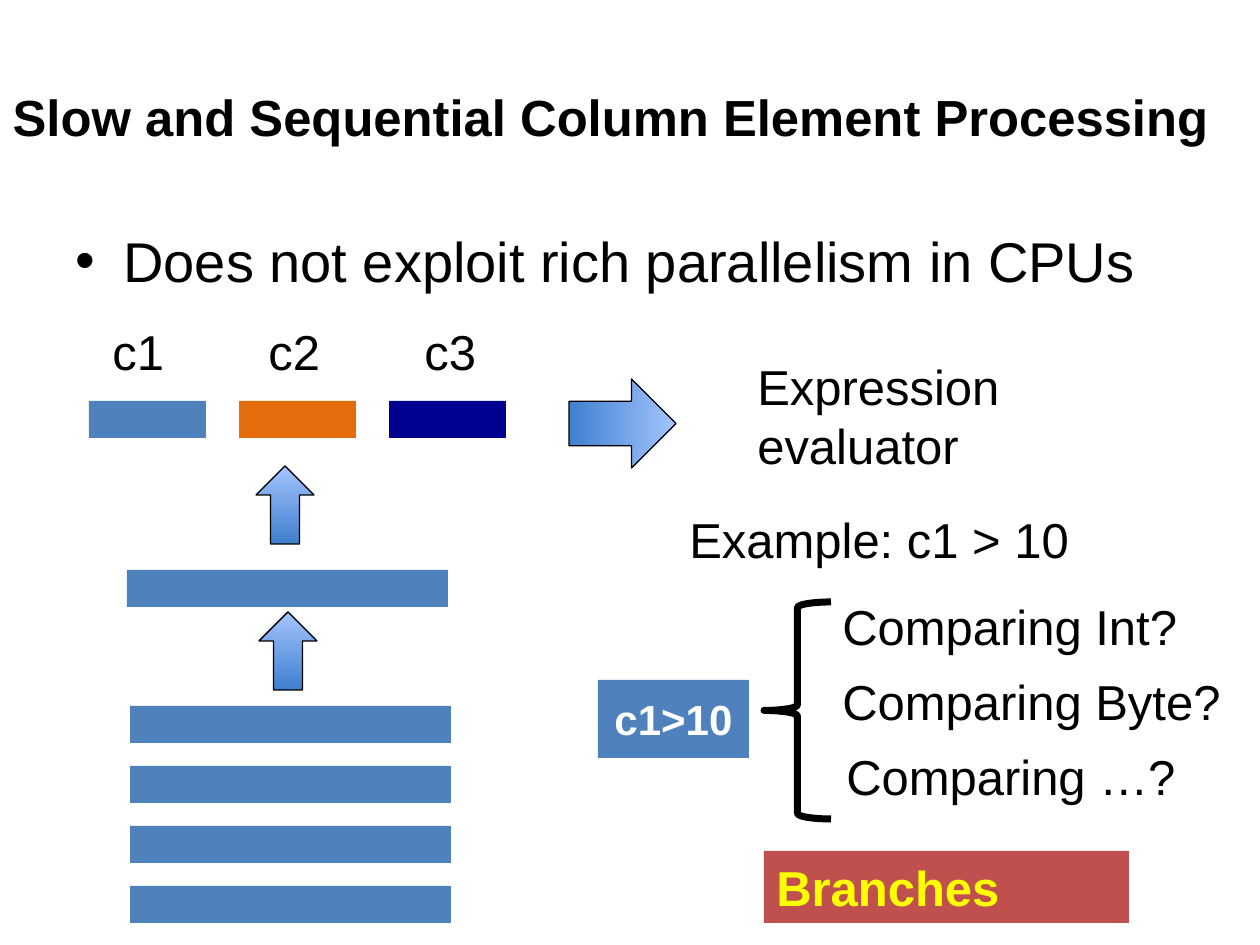
"""Build a slide on slow, sequential column element processing."""
from dataclasses import dataclass
from typing import Optional

from lxml.etree import SubElement
from pptx import Presentation
from pptx.dml.color import RGBColor as RGB
from pptx.enum.shapes import MSO_SHAPE as SHAPE
from pptx.enum.text import MSO_ANCHOR as ANCHOR, PP_ALIGN as ALIGN
from pptx.oxml.ns import qn
from pptx.util import Emu, Pt

EMU_PER_PX = 914400 / 126
FONT = "Arial"
COLORS = {
    "black": "000000",
    "white": "FFFFFF",
    "blue": "4F81BD",
    "orange": "E46C0A",
    "navy": "000090",
    "red": "C0504D",
    "yellow": "FFFF00",
    "arrow_dark": "3F80CE",
    "arrow_light": "A4C4FF",
}


@dataclass(frozen=True)
class Box:
    x: int
    y: int
    w: int
    h: int

    def emu(self) -> tuple:
        return tuple(px(v) for v in (self.x, self.y, self.w, self.h))


@dataclass(frozen=True)
class Label:
    box: Box
    text: str
    size: int = 28
    color: str = "black"
    bold: bool = False
    align: Optional[ALIGN] = None
    anchor: ANCHOR = ANCHOR.TOP


@dataclass(frozen=True)
class Block:
    box: Box
    color: str = "blue"
    label: Optional[Label] = None


@dataclass(frozen=True)
class Arrow:
    box: Box
    rotation: int = 0


def px(value: int) -> Emu:
    return Emu(round(value * EMU_PER_PX))


def rgb(name: str) -> RGB:
    return RGB.from_string(COLORS[name])


def write(sp, label: Label):
    tf = sp.text_frame
    tf.word_wrap = True
    tf.vertical_anchor = label.anchor
    p = tf.paragraphs[0]
    p.alignment = label.align or ALIGN.LEFT
    r = p.add_run()
    r.text = label.text
    r.font.name = FONT
    r.font.size = Pt(label.size)
    r.font.bold = label.bold
    r.font.color.rgb = rgb(label.color)
    return p


def place_title(s, label: Label) -> None:
    sp = s.shapes.title
    sp.left, sp.top, sp.width, sp.height = label.box.emu()
    write(sp, label)


def add_label(s, label: Label):
    return write(s.shapes.add_textbox(*label.box.emu()), label)


def add_bullet(s, label: Label, indent: int) -> None:
    p = add_label(s, label)
    p.space_before = Pt(3)
    pPr = p._p.get_or_add_pPr()
    pPr.set("marL", str(px(indent)))
    pPr.set("indent", str(-px(indent)))
    SubElement(pPr, qn("a:buFont"), typeface=FONT)
    SubElement(pPr, qn("a:buChar"), char="•")


def add_shape(s, kind: SHAPE, box: Box):
    sp = s.shapes.add_shape(kind, *box.emu())
    sp.shadow.inherit = False
    return sp


def outline(sp, width: float) -> None:
    sp.line.color.rgb = rgb("black")
    sp.line.width = Pt(width)


def add_block(s, block: Block) -> None:
    sp = add_shape(s, SHAPE.RECTANGLE, block.box)
    sp.fill.solid()
    sp.fill.fore_color.rgb = rgb(block.color)
    sp.line.fill.background()
    if block.label:
        write(sp, block.label)


def add_arrow(s, arrow: Arrow) -> None:
    sp = add_shape(s, SHAPE.UP_ARROW, arrow.box)
    sp.rotation = arrow.rotation
    sp.fill.gradient()
    sp.fill.gradient_angle = 90
    for stop, position, color in zip(sp.fill.gradient_stops, (0, 1), ("arrow_dark", "arrow_light")):
        stop.position = position
        stop.color.rgb = rgb(color)
    outline(sp, 0.75)


def add_brace(s, box: Box) -> None:
    sp = add_shape(s, SHAPE.LEFT_BRACE, box)
    sp.fill.background()
    outline(sp, 4)


TITLE = Label(Box(0, 38, 1256, 157), "Slow and Sequential Column Element Processing",
              29, bold=True, anchor=ANCHOR.MIDDLE)
POINT = Label(Box(63, 220, 1134, 624), "Does not exploit rich parallelism in CPUs", 32)

ROWS = [Block(Box(130, 706 + 60 * i, 321, 37)) for i in range(4)]
CURRENT_ROW = Block(Box(127, 570, 321, 37))
COLUMNS = [Block(Box(89 + 150 * i, 401, 117, 37), color)
           for i, color in enumerate(("blue", "orange", "navy"))]
COLUMN_NAMES = [Label(Box(100 + 156 * i, 315, 102, 72), name)
                for i, name in enumerate(("c1", "c2", "c3"))]
ARROWS = [Arrow(Box(256, 466, 58, 78)), Arrow(Box(259, 612, 58, 78)),
          Arrow(Box(578, 370, 89, 107), 90)]

EVALUATOR = [Label(Box(745, 350, 379, 131), "Expression evaluator"),
             Label(Box(677, 503, 449, 72), "Example: c1 > 10")]
CASES = [Label(Box(x, 590 + 75 * i, 426, 72), f"Comparing {kind}?")
         for i, (x, kind) in enumerate(((830, "Int"), (830, "Byte"), (834, "…")))]
CONDITION_BOX = Box(598, 680, 151, 78)
CONDITION = Block(CONDITION_BOX, label=Label(CONDITION_BOX, "c1>10", 24, "white", True,
                                             ALIGN.CENTER, ANCHOR.MIDDLE))
BRANCHES_BOX = Box(764, 851, 365, 72)
BRANCHES = Block(BRANCHES_BOX, "red", Label(BRANCHES_BOX, "Branches", 28, "yellow", True))
BRACE = Box(764, 602, 67, 217)


def main() -> None:
    prs = Presentation()
    prs.slide_width, prs.slide_height = px(1260), px(945)
    s = prs.slides.add_slide(prs.slide_layouts[5])
    place_title(s, TITLE)
    add_bullet(s, POINT, 48)
    for block in (*ROWS, CURRENT_ROW, *COLUMNS, BRANCHES, CONDITION):
        add_block(s, block)
    for arrow in ARROWS:
        add_arrow(s, arrow)
    add_brace(s, BRACE)
    for label in (*COLUMN_NAMES, *EVALUATOR, *CASES):
        add_label(s, label)
    prs.save("out.pptx")


if __name__ == "__main__":
    main()
